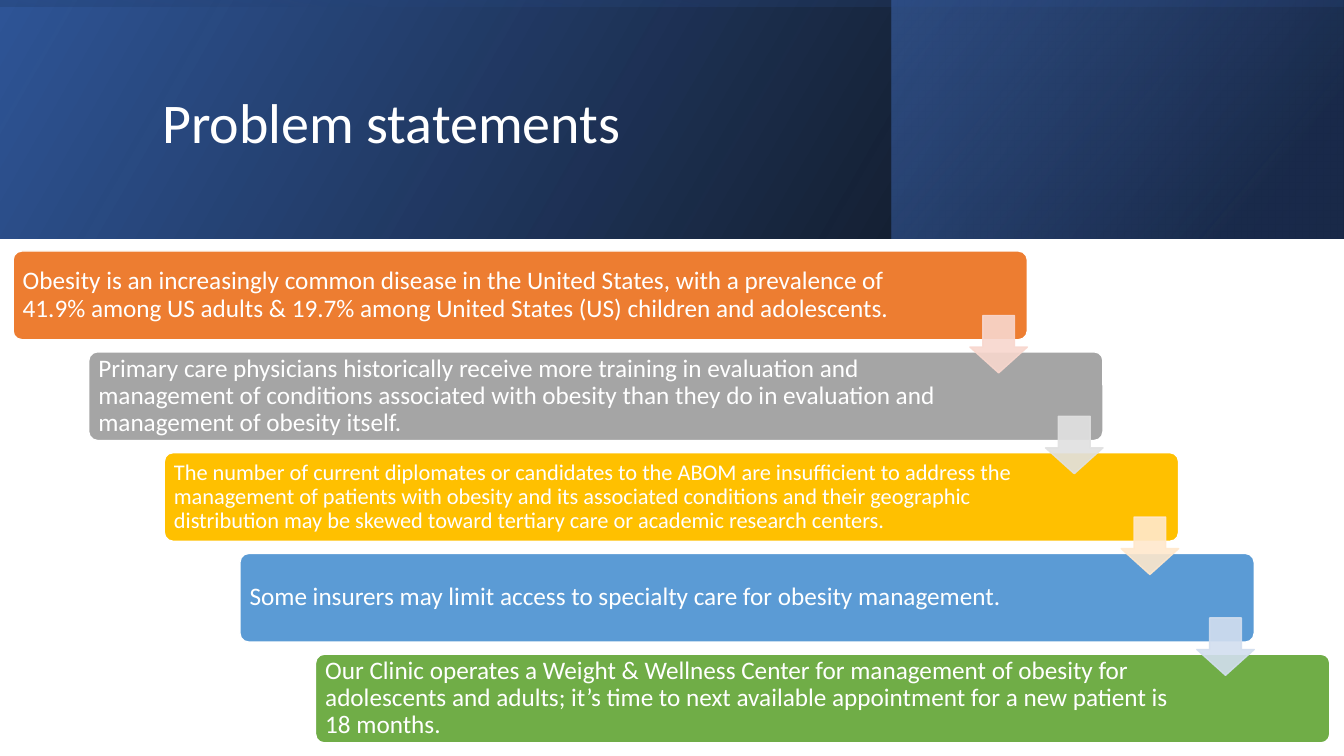
from lxml import etree
from pptx import Presentation
from pptx.dml.color import RGBColor
from pptx.enum.shapes import MSO_SHAPE
from pptx.enum.text import MSO_ANCHOR, PP_ALIGN
from pptx.oxml.ns import qn
from pptx.util import Inches, Pt

RECTANGLE = MSO_SHAPE.RECTANGLE
ROUNDED = MSO_SHAPE.ROUNDED_RECTANGLE
DOWN_ARROW = MSO_SHAPE.DOWN_ARROW
MIDDLE = MSO_ANCHOR.MIDDLE
LEFT = PP_ALIGN.LEFT

WHITE = "FFFFFF"
STEP_X, STEP_Y = 0.75, 1.0
BAR_WIDTH, BAR_HEIGHT = 10.06, 0.88
ARROW_SIZE = 0.57


def rgb(color):
    return RGBColor.from_string(color)


def set_opacity(shape, percents):
    """Give the shape's colours, in document order, these opacities."""
    colors = shape._element.spPr.iter(qn("a:srgbClr"))
    for color, percent in zip(list(colors), percents):
        etree.SubElement(color, qn("a:alpha")).set("val", str(percent * 1000))


prs = Presentation()
prs.slide_width, prs.slide_height = Inches(13.33), Inches(7.5)
slide = prs.slides.add_slide(prs.slide_layouts[6])
shapes = slide.shapes

# Header: three layered gradients, each stop is (position, colour, opacity)
header_layers = [
    ((0, 0, 13.33, 2.37), 0, 30, [(0, "000000", 96), (1, "2F5597", 100)]),
    ((8.84, 0, 4.48, 2.37), 0, 40, [(0.19, "203864", 68), (1, "4472C4", 48)]),
    ((5.48, -5.48, 2.37, 13.33), 270, 10, [(0.23, "2F5597", 16), (0.99, "000000", 45)]),
]
for box, rotation, angle, stops in header_layers:
    layer = shapes.add_shape(RECTANGLE, *map(Inches, box))
    layer.shadow.inherit = False
    layer.rotation = rotation
    layer._element.spPr.xfrm.set("flipH", "1")
    layer.line.fill.background()
    layer.fill.gradient()
    layer.fill.gradient_angle = angle
    for gradient_stop, (position, color, _) in zip(layer.fill.gradient_stops, stops):
        gradient_stop.position = position
        gradient_stop.color.rgb = rgb(color)
    set_opacity(layer, [opacity for _, _, opacity in stops])

title = shapes.add_textbox(Inches(1.51), Inches(0.38), Inches(10.63), Inches(1.72))
title.text_frame.word_wrap = True
title.text_frame.vertical_anchor = MIDDLE
heading = title.text_frame.paragraphs[0]
heading.text = "Problem statements"
heading.line_spacing = 0.9
heading.font.size = Pt(40)
heading.font.name = "Calibri"
heading.font.color.rgb = rgb(WHITE)

# Staircase of statements: colour, text size, right inset, text
statements = [
    ("ED7D31", 18, 1.07,
     "Obesity is an increasingly common disease in the United States, with a prevalence of "
     "41.9% among US adults & 19.7% among United States (US) children and adolescents."),
    ("A5A5A5", 18, 1.4,
     "Primary care physicians historically receive more training in evaluation and management "
     "of conditions associated with obesity than they do in evaluation and management of "
     "obesity itself."),
    ("FFC000", 16, 1.4,
     "The number of current diplomates or candidates to the ABOM are insufficient to address "
     "the management of patients with obesity and its associated conditions and their "
     "geographic distribution may be skewed toward tertiary care or academic research centers."),
    ("5B9BD5", 18, 1.4,
     "Some insurers may limit access to specialty care for obesity management."),
    ("70AD47", 18, 1.4,
     "Our Clinic operates a Weight & Wellness Center for management of obesity for "
     "adolescents and adults; it’s time to next available appointment for a new patient is "
     "18 months."),
]
for i, (color, size, right_inset, text) in enumerate(statements):
    bar = shapes.add_shape(ROUNDED, Inches(0.13 + i * STEP_X), Inches(2.49 + i * STEP_Y),
                           Inches(BAR_WIDTH), Inches(BAR_HEIGHT))
    bar.shadow.inherit = False
    bar.adjustments[0] = 0.1
    bar.fill.solid()
    bar.fill.fore_color.rgb = rgb(color)
    bar.line.color.rgb = rgb(WHITE)
    bar.line.width = Pt(1)
    frame = bar.text_frame
    frame.word_wrap = True
    frame.vertical_anchor = MIDDLE
    frame.margin_left = frame.margin_top = frame.margin_bottom = Inches(0.07)
    frame.margin_right = Inches(right_inset)
    statement = frame.paragraphs[0]
    statement.text = text
    statement.alignment = LEFT
    statement.line_spacing = 0.9
    statement.font.size = Pt(size)
    statement.font.name = "Calibri"
    statement.font.color.rgb = rgb(WHITE)

# Arrows leading from each statement to the next
for i, color in enumerate(["F8D7CE", "E1E1E1", "FFE8CC", "D2DEEF"]):
    arrow = shapes.add_shape(DOWN_ARROW, Inches(9.62 + i * STEP_X), Inches(3.13 + i * STEP_Y),
                             Inches(ARROW_SIZE), Inches(ARROW_SIZE))
    arrow.shadow.inherit = False
    arrow.adjustments[0] = 0.55
    arrow.adjustments[1] = 0.45
    arrow.fill.solid()
    arrow.fill.fore_color.rgb = rgb(color)
    arrow.line.color.rgb = rgb(color)
    arrow.line.width = Pt(1)
    set_opacity(arrow, [90, 90])

prs.save("out.pptx")
